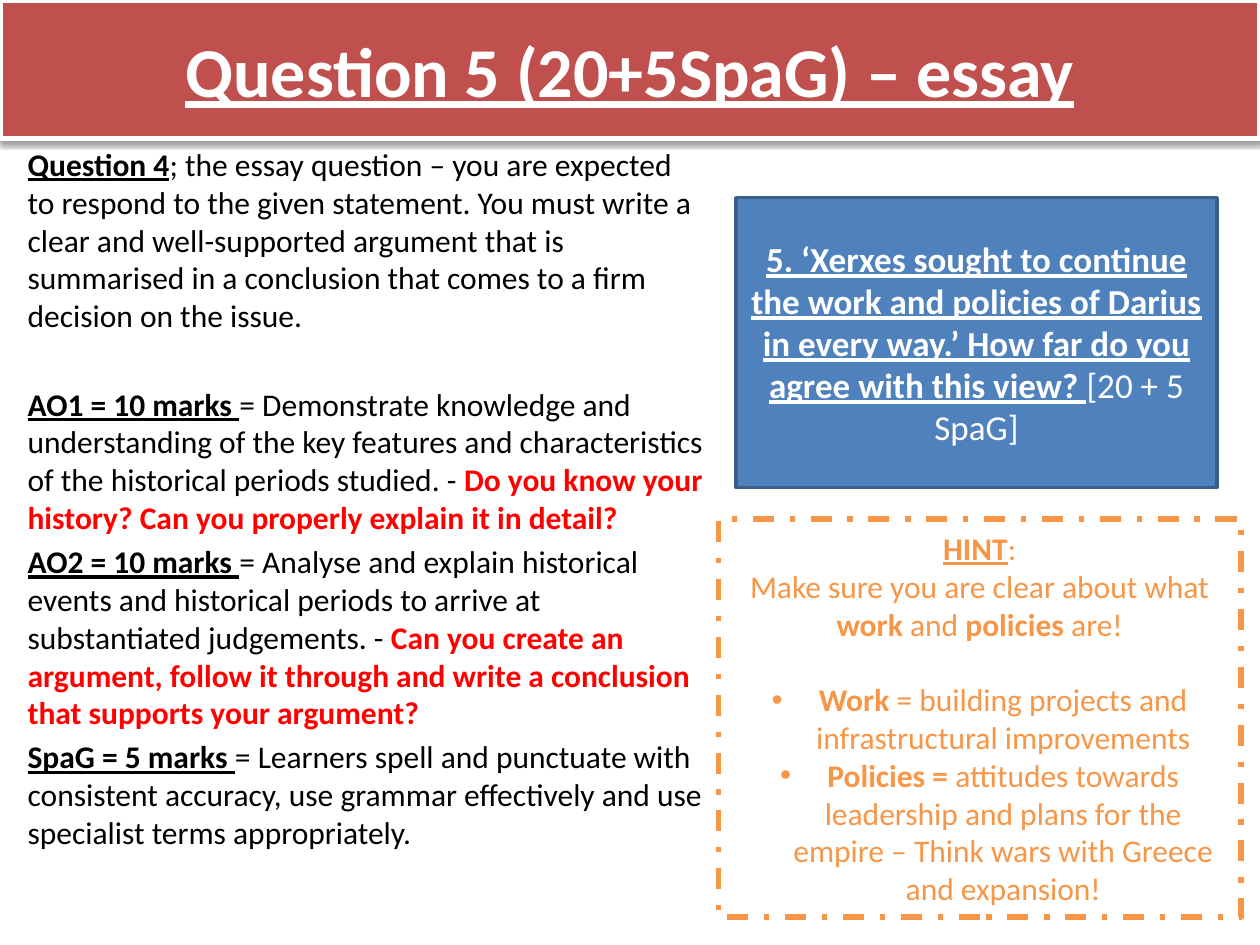
from lxml import etree
from pptx import Presentation
from pptx.dml.color import RGBColor
from pptx.enum.dml import MSO_LINE
from pptx.enum.shapes import MSO_SHAPE
from pptx.enum.text import MSO_ANCHOR, MSO_AUTO_SIZE, PP_ALIGN
from pptx.oxml.ns import qn
from pptx.util import Pt

RECTANGLE = MSO_SHAPE.RECTANGLE
DASH_DOT = MSO_LINE.DASH_DOT
TOP, MIDDLE = MSO_ANCHOR.TOP, MSO_ANCHOR.MIDDLE
LEFT, CENTER = PP_ALIGN.LEFT, PP_ALIGN.CENTER
NO_AUTOFIT = MSO_AUTO_SIZE.NONE

WHITE, BLACK, RED, ORANGE = "FFFFFF", "000000", "FF0000", "F79646"
BRICK, BLUE, NAVY = "C0504D", "4F81BD", "3A5F8C"
HANGING = 27

PLAIN = {}
BOLD = {"bold": True}
HEADING = {"bold": True, "underline": True}
PROMPT = {"bold": True, "color": RED}

TITLE = [{"runs": [("Question 5 (20+5SpaG) – essay", HEADING)]}]
GUIDANCE = [
    {"runs": [
        ("Question 4", HEADING),
        ("; the essay question – you are expected to respond to the given statement. "
         "You must write a clear and well-supported argument that is summarised in a "
         "conclusion that comes to a firm decision on the issue.", PLAIN)]},
    {"before": 29, "runs": [
        ("AO1 = 10 marks ", HEADING),
        ("= Demonstrate knowledge and understanding of the key features and "
         "characteristics of the historical periods studied. - ", PLAIN),
        ("Do you know your history? Can you properly explain it in detail?", PROMPT)]},
    {"before": 3.6, "runs": [
        ("AO2 = 10 marks ", HEADING),
        ("= Analyse and explain historical events and historical periods to arrive at "
         "substantiated judgements. - ", PLAIN),
        ("Can you create an argument, follow it through and write a conclusion that "
         "supports your argument?", PROMPT)]},
    {"before": 3.6, "runs": [
        ("SpaG = 5 marks ", HEADING),
        ("= Learners spell and punctuate with consistent accuracy, use grammar "
         "effectively and use specialist terms appropriately.", PLAIN)]},
]
QUESTION = [{"runs": [
    ("5. ‘Xerxes sought to continue the work and policies of Darius in every way.’ "
     "How far do you agree with this view? ", HEADING),
    ("[20 + 5 SpaG]", PLAIN)]}]
HINT = [
    {"runs": [("HINT", HEADING), (":", PLAIN)]},
    {"runs": [("Make sure you are clear about what ", PLAIN), ("work", BOLD),
              (" and ", PLAIN), ("policies", BOLD), (" are!", PLAIN)]},
    {"before": 21.6, "bullet": True, "runs": [
        ("Work", BOLD), (" = building projects and infrastructural improvements", PLAIN)]},
    {"bullet": True, "runs": [
        ("Policies = ", BOLD),
        ("attitudes towards leadership and plans for the empire – Think wars with "
         "Greece and expansion!", PLAIN)]},
]


def rgb(value):
    return RGBColor.from_string(value)


def place(shape, left, top, width, height):
    bounds = {"left": left, "top": top, "width": width, "height": height}
    for name, value in bounds.items():
        setattr(shape, name, Pt(value))


def outline(shape, color, width):
    shape.line.color.rgb = rgb(color)
    shape.line.width = Pt(width)


def add_box(slide, bounds):
    shape = slide.shapes.add_shape(RECTANGLE, *map(Pt, bounds))
    shape.shadow.inherit = False
    return shape


def set_bullet(paragraph, bullet):
    properties = paragraph._p.get_or_add_pPr()
    indent = HANGING if bullet else 0
    properties.set("marL", str(Pt(indent)))
    properties.set("indent", str(Pt(-indent)))
    if bullet:
        etree.SubElement(properties, qn("a:buFont"), typeface="Arial")
        etree.SubElement(properties, qn("a:buChar"), char="•")
    else:
        etree.SubElement(properties, qn("a:buNone"))


def write(shape, content, size, color, alignment, anchor):
    frame = shape.text_frame
    frame.word_wrap = True
    frame.auto_size = NO_AUTOFIT
    frame.vertical_anchor = anchor
    for index, item in enumerate(content):
        paragraph = frame.add_paragraph() if index else frame.paragraphs[0]
        set_bullet(paragraph, item.get("bullet", False))
        paragraph.alignment = alignment
        paragraph.space_before = Pt(item.get("before", 0))
        for text, style in item["runs"]:
            run = paragraph.add_run()
            run.text = text
            values = {"name": "Calibri", "size": Pt(size),
                      "bold": style.get("bold", False),
                      "underline": style.get("underline", False)}
            for name, value in values.items():
                setattr(run.font, name, value)
            run.font.color.rgb = rgb(style.get("color", color))


def add_shadow(shape):
    effects = etree.SubElement(shape._element.spPr, qn("a:effectLst"))
    shadow = etree.SubElement(effects, qn("a:outerShdw"), blurRad=str(Pt(3.1)),
                              dist=str(Pt(1.6)), dir="5400000", rotWithShape="0")
    color = etree.SubElement(shadow, qn("a:srgbClr"), val=BLACK)
    etree.SubElement(color, qn("a:alpha"), val="38000")


def main():
    presentation = Presentation()
    presentation.slide_width, presentation.slide_height = Pt(720), Pt(540)
    slide = presentation.slides.add_slide(presentation.slide_layouts[1])

    title = slide.shapes.title
    place(title, 0, 0, 720, 79.2)
    title.fill.solid()
    title.fill.fore_color.rgb = rgb(BRICK)
    outline(title, WHITE, 3)
    add_shadow(title)
    write(title, TITLE, 40, WHITE, CENTER, MIDDLE)

    body = slide.placeholders[1]
    place(body, 8.6, 79.2, 401.8, 451.4)
    write(body, GUIDANCE, 18, BLACK, LEFT, TOP)

    question = add_box(slide, (420.5, 113, 275, 165.6))
    question.fill.solid()
    question.fill.fore_color.rgb = rgb(BLUE)
    outline(question, NAVY, 2)
    write(question, QUESTION, 20, WHITE, CENTER, MIDDLE)

    hint = add_box(slide, (410.4, 296.6, 298.8, 227.5))
    hint.fill.background()
    outline(hint, ORANGE, 3)
    hint.line.dash_style = DASH_DOT
    write(hint, HINT, 18, ORANGE, CENTER, MIDDLE)

    presentation.save("out.pptx")


if __name__ == "__main__":
    main()
